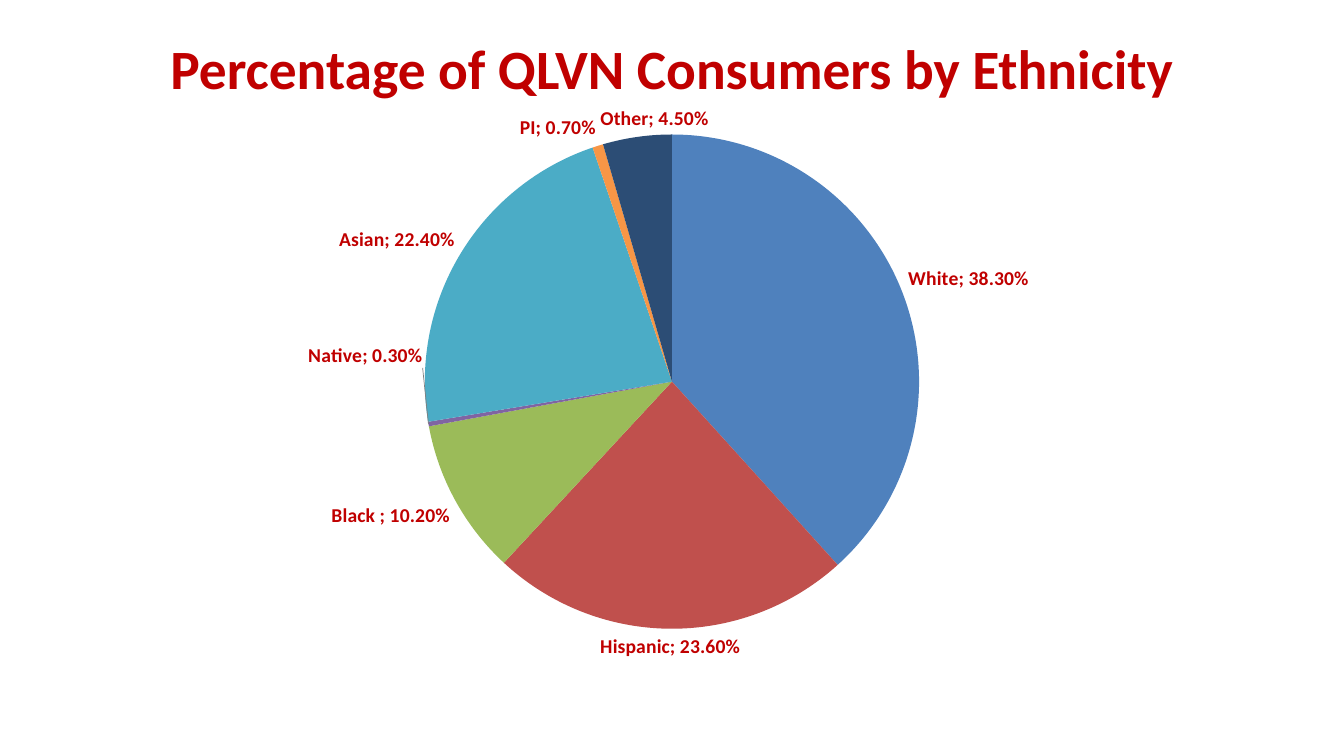
import copy

import pptx
import pptx.chart.data
import pptx.dml.color
import pptx.enum.chart
import pptx.enum.text
import pptx.oxml
import pptx.util
from pptx.util import Pt

CHART_NS = 'xmlns:c="http://schemas.openxmlformats.org/drawingml/2006/chart"'
DRAWING_NS = 'xmlns:a="http://schemas.openxmlformats.org/drawingml/2006/main"'


def rgb(hex_color):
    return pptx.dml.color.RGBColor.from_string(hex_color)


def manual_layout(**settings):
    """Build a c:layout element; positions are fractions of the chart area."""
    children = "".join(f'<c:{tag} val="{value}"/>' for tag, value in settings.items())
    return pptx.oxml.parse_xml(
        f"<c:layout {CHART_NS}><c:manualLayout>{children}</c:manualLayout></c:layout>")


RED = "C00000"
ethnicities = [
    ("White", 0.383, "4F81BD"),
    ("Hispanic", 0.236, "C0504D"),
    ("Black ", 0.102, "9BBB59"),
    ("Native", 0.003, "8064A2"),
    ("Asian", 0.224, "4BACC6"),
    ("PI", 0.007, "F79646"),
    ("Other", 0.045, "2C4D75"),
]
label_shifts = {3: (0, -0.14), 6: (0.06, 0)}

presentation = pptx.Presentation()
presentation.slide_width = Pt(960)
presentation.slide_height = Pt(540)
slide = presentation.slides.add_slide(presentation.slide_layouts[5])

title = slide.shapes.title
title.left, title.top, title.width, title.height = Pt(48), Pt(21.6), Pt(864), Pt(52.8)
title.text_frame.text = "Percentage of QLVN Consumers by Ethnicity"
title.text_frame.vertical_anchor = pptx.enum.text.MSO_ANCHOR.MIDDLE
heading = title.text_frame.paragraphs[0]
heading.alignment = pptx.enum.text.PP_ALIGN.CENTER
heading.font.name = "Calibri"
heading.font.size = Pt(39.6)
heading.font.bold = True
heading.font.color.rgb = rgb(RED)

shares = pptx.chart.data.CategoryChartData(number_format="0.00%")
shares.categories = [name for name, share, color in ethnicities]
shares.add_series("Series 1", [share for name, share, color in ethnicities])
pie = slide.shapes.add_chart(
    pptx.enum.chart.XL_CHART_TYPE.PIE, Pt(48), Pt(67), Pt(864), Pt(415.4), shares).chart
pie.has_legend = False
pie.has_title = False
pie.font.name = "Calibri"
pie.font.size = Pt(10)
pie.font.color.rgb = rgb("000000")
pie.plots[0].vary_by_categories = True

plot_area = pie.plots[0]._element.getparent()
for old_layout in plot_area.findall(pptx.oxml.ns.qn("c:layout")):
    plot_area.remove(old_layout)
plot_area.insert(0, manual_layout(
    layoutTarget="inner", xMode="edge", yMode="edge", x=0.29, y=0.07, w=0.42, h=0.85))

series = pie.plots[0].series[0]
for index, (name, share, color) in enumerate(ethnicities):
    slice_fill = series.points[index].format.fill
    slice_fill.solid()
    slice_fill.fore_color.rgb = rgb(color)

labels = series.data_labels
labels.show_value = True
labels.show_category_name = True
labels.show_percentage = False
labels.number_format = "0.00%"
labels.number_format_is_linked = False
labels.position = pptx.enum.chart.XL_LABEL_POSITION.OUTSIDE_END
labels.font.name = "Calibri"
labels.font.size = Pt(14)
labels.font.bold = True
labels.font.color.rgb = rgb(RED)

# Shifted labels keep the shared label settings and add an offset.
shared_settings = [child for child in labels._element
                   if not child.tag.endswith("LeaderLines")]
for position, (index, (x, y)) in enumerate(label_shifts.items()):
    shifted_label = pptx.oxml.parse_xml(f'<c:dLbl {CHART_NS}><c:idx val="{index}"/></c:dLbl>')
    shifted_label.append(manual_layout(x=x, y=y))
    for setting in shared_settings:
        shifted_label.append(copy.deepcopy(setting))
    labels._element.insert(position, shifted_label)

labels._element.append(pptx.oxml.parse_xml(
    f'<c:leaderLines {CHART_NS} {DRAWING_NS}><c:spPr><a:ln w="6350"><a:solidFill>'
    '<a:srgbClr val="808080"/></a:solidFill></a:ln></c:spPr></c:leaderLines>'))

presentation.save("out.pptx")
